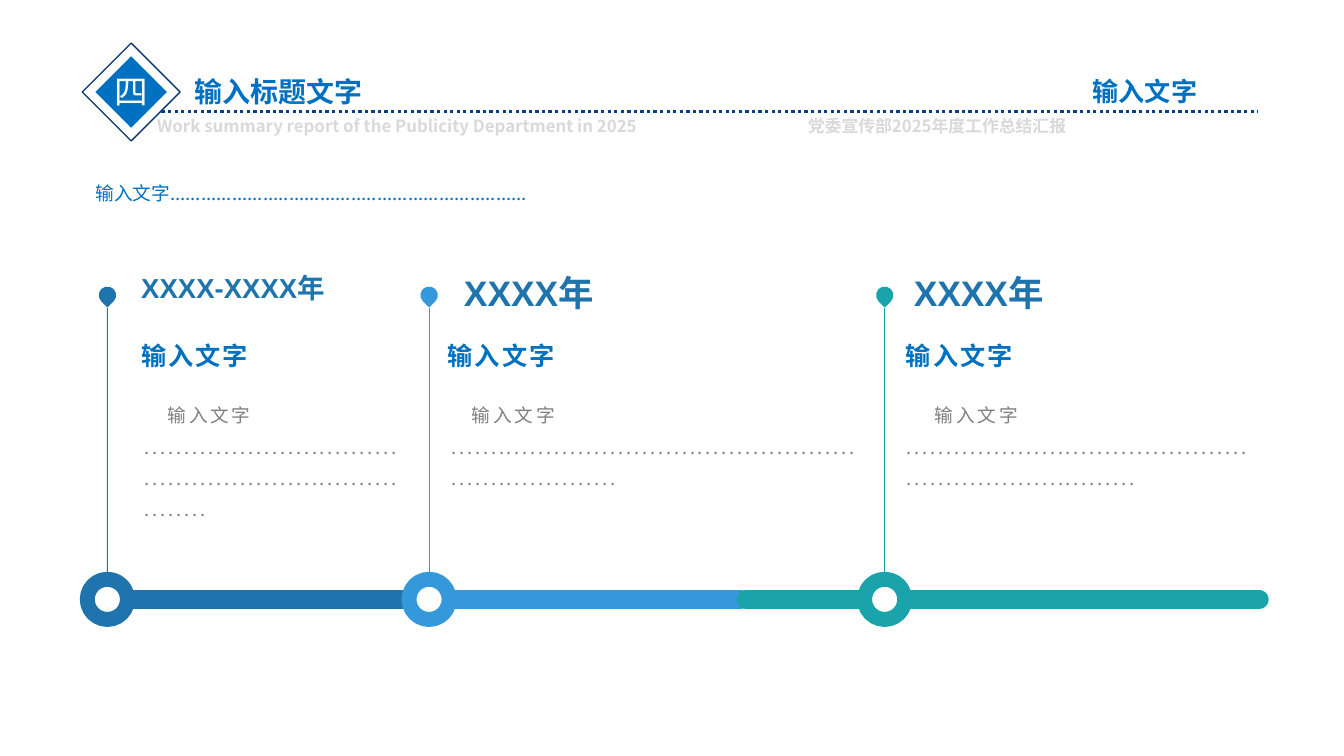
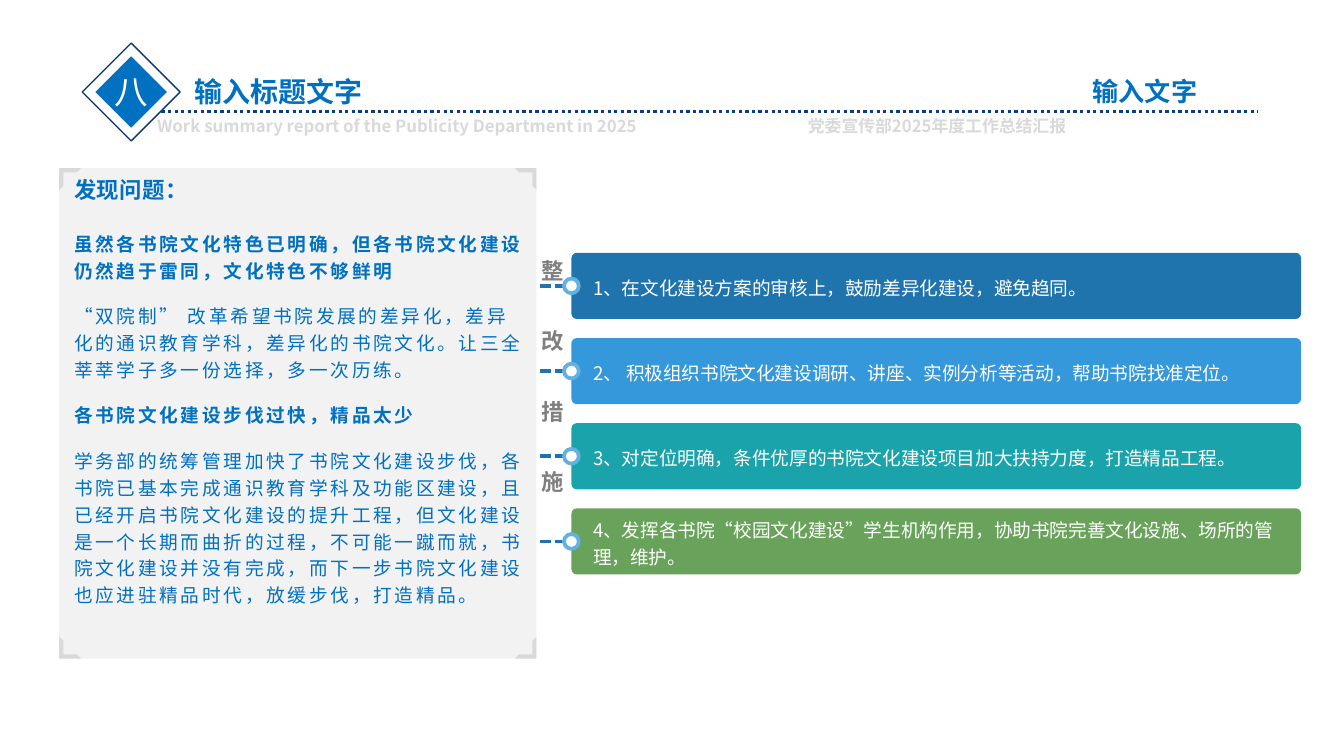
from dataclasses import dataclass

import pptx
import pptx.dml.color
import pptx.enum.dml
import pptx.enum.shapes
import pptx.enum.text
import pptx.oxml
import pptx.oxml.ns
import pptx.shapes.autoshape
import pptx.shapes.connector
import pptx.shapes.shapetree
import pptx.slide
import pptx.text.text
import pptx.util

Cm = pptx.util.Cm
Pt = pptx.util.Pt
SHAPE = pptx.enum.shapes.MSO_SHAPE
ANCHOR = pptx.enum.text.MSO_ANCHOR
ALIGN = pptx.enum.text.PP_ALIGN
DASH = pptx.enum.dml.MSO_LINE
Shapes = pptx.shapes.shapetree._BaseGroupShapes
Frame = pptx.text.text.TextFrame
Box = tuple[float, float, float, float]  # left, top, width, height in cm

# Shared look
CJK = "Noto Sans CJK SC"
BLUE, NAVY, SKY, TEAL, GREEN = "0070C0", "1F74AD", "3498DB", "1AA3AA", "69A35B"
WHITE, GREY, SILVER, PALE = "FFFFFF", "808080", "D9D9D9", "F2F2F2"
INSETS = (0.25, 0.13, 0.25, 0.13)
TIGHT = (0.18, 0.1, 0.18, 0.1)


@dataclass
class Milestone:
    color: str
    x: float
    bar: tuple[float, float]
    year: str
    year_size: float
    year_at: tuple[float, float]     # left, width
    heading_at: tuple[float, float]
    body_at: tuple[float, float]
    body_height: float
    indent: float


MILESTONES = [
    Milestone(NAVY, 2.03, (1.91, 7.9), "XXXX-XXXX年", 14.7,
              (2.49, 4.24), (2.49, 4.83), (2.49, 5.33), 3.23, 0.43),
    Milestone(SKY, 8.11, (8.0, 14.0), "XXXX年", 19,
              (8.59, 3.71), (8.28, 5.87), (8.28, 8.28), 2.64, 0.39),
    Milestone(TEAL, 16.72, (14.1, 23.8), "XXXX年", 19,
              (17.09, 3.71), (16.94, 6.81), (16.89, 7.01), 2.64, 0.53),
]

MEASURES = [
    (NAVY, "1、在文化建设方案的审核上，鼓励差异化建设，避免趋同。"),
    (SKY, "2、 积极组织书院文化建设调研、讲座、实例分析等活动，帮助书院找准定位。"),
    (TEAL, "3、对定位明确，条件优厚的书院文化建设项目加大扶持力度，打造精品工程。"),
    (GREEN, "4、发挥各书院“校园文化建设”学生机构作用，协助书院完善文化设施、"
            "场所的管理，维护。"),
]

# Each problem: bold statement, then its explanation
PROBLEMS = [
    ("虽然各书院文化特色已明确，但各书院文化建设仍然趋于雷同，文化特色不够鲜明",
     "“双院制” 改革希望书院发展的差异化，差异化的通识教育学科，差异化的书院文化。"
     "让三全莘莘学子多一份选择，多一次历练。"),
    ("各书院文化建设步伐过快，精品太少",
     "学务部的统筹管理加快了书院文化建设步伐，各书院已基本完成通识教育学科及功能区建设，"
     "且已经开启书院文化建设的提升工程，但文化建设是一个长期而曲折的过程，不可能一蹴而就，"
     "书院文化建设并没有完成，而下一步书院文化建设也应进驻精品时代，放缓步伐，打造精品。"),
]


# Helpers
def rgb(value: str) -> pptx.dml.color.RGBColor:
    return pptx.dml.color.RGBColor.from_string(value)


def write(tf: Frame, text: str, *, size: float, color: str, font: str = CJK,
          bold: bool = False, spacing: float = 0, indent: float = 0,
          tab: float = 0, line: float = 1, after: float = 0,
          align: ALIGN = ALIGN.LEFT) -> None:
    """Write one paragraph; the first call fills the empty one."""
    p = tf.add_paragraph() if tf.text else tf.paragraphs[0]
    p_pr = p._p.get_or_add_pPr()
    if indent:
        p_pr.set("indent", str(Cm(indent)))
    if tab:
        tabs = pptx.oxml.parse_xml(
            f'<a:tabLst {pptx.oxml.ns.nsdecls("a")}>'
            f'<a:tab pos="{Cm(tab)}" algn="l"/></a:tabLst>')
        p_pr.append(tabs)
    p.alignment, p.line_spacing = align, line
    p.space_before, p.space_after = Pt(0), Pt(after)
    r = p.add_run()
    r.text = text
    r.font.size, r.font.bold, r.font.name = Pt(size), bold, font
    r.font.color.rgb = rgb(color)
    r_pr = r._r.get_or_add_rPr()
    if spacing:
        r_pr.set("spc", str(round(spacing * 100)))
    r_pr.find(pptx.oxml.ns.qn("a:latin")).addnext(pptx.oxml.parse_xml(
        f'<a:ea {pptx.oxml.ns.nsdecls("a")} typeface="{CJK}"/>'))


def set_frame(tf: Frame, insets: Box = INSETS, anchor: ANCHOR = ANCHOR.TOP,
              wrap: bool = True) -> Frame:
    tf.auto_size = pptx.enum.text.MSO_AUTO_SIZE.NONE
    tf.word_wrap, tf.vertical_anchor = wrap, anchor
    (tf.margin_left, tf.margin_top,
     tf.margin_right, tf.margin_bottom) = map(Cm, insets)
    return tf


def add_text(shapes: Shapes, box: Box, **frame) -> Frame:
    return set_frame(shapes.add_textbox(*map(Cm, box)).text_frame, **frame)


def paint(sp: pptx.shapes.autoshape.Shape, fill: str = "", line: str = "",
          width: float = 0) -> None:
    sp.shadow.inherit = False
    if fill:
        sp.fill.solid()
        sp.fill.fore_color.rgb = rgb(fill)
    else:
        sp.fill.background()
    if line:
        sp.line.color.rgb, sp.line.width = rgb(line), Pt(width)
    else:
        sp.line.fill.background()


def add_shape(shapes: Shapes, kind: SHAPE, box: Box,
              **look) -> pptx.shapes.autoshape.Shape:
    sp = shapes.add_shape(kind, *map(Cm, box))
    paint(sp, **look)
    return sp


def add_centred(shapes: Shapes, kind: SHAPE, x: float, y: float, size: float,
                **look) -> pptx.shapes.autoshape.Shape:
    return add_shape(shapes, kind, (x - size / 2, y - size / 2, size, size), **look)


def add_line(shapes: Shapes, x1: float, y1: float, x2: float, y2: float,
             color: str, width: float, dash: DASH | None = None,
             rounded: bool = False) -> pptx.shapes.connector.Connector:
    c = shapes.add_connector(pptx.enum.shapes.MSO_CONNECTOR.STRAIGHT,
                             Cm(x1), Cm(y1), Cm(x2), Cm(y2))
    c.line.color.rgb, c.line.width = rgb(color), Pt(width)
    if dash is not None:
        c.line.dash_style = dash
    if rounded:
        c.line._get_or_add_ln().set("cap", "rnd")
    c._element.spPr.append(pptx.oxml.parse_xml(
        f'<a:effectLst {pptx.oxml.ns.nsdecls("a")}/>'))
    return c


def add_header(s: pptx.slide.Slide, number: str) -> None:
    # Numbered diamond
    badge = s.shapes.add_group_shape().shapes
    x, y = 2.48, 1.74
    add_centred(badge, SHAPE.DIAMOND, x, y, 1.35, fill=BLUE)
    tf = add_text(badge, (1.91, 1.22, 1.14, 1.02), wrap=False)
    write(tf, number, size=18, color=WHITE, align=ALIGN.CENTER)
    add_centred(badge, SHAPE.DIAMOND, x, y, 1.85, line="063672", width=0.75)

    # Title, rule and captions
    title = s.shapes.title
    title.left, title.top, title.width, title.height = map(
        Cm, (3.43, 1.27, 3.68, 0.89))
    write(set_frame(title.text_frame, wrap=False), "输入标题文字",
          size=15, color=BLUE, bold=True)
    add_line(s.shapes, 3.05, 2.11, 23.77, 2.11, "073E87", 1.75, DASH.ROUND_DOT)
    write(add_text(s.shapes, (20.4, 1.3, 4.5, 0.86)), "输入文字",
          size=14, color=BLUE, bold=True)
    write(add_text(s.shapes, (2.72, 2.06, 21.39, 0.63)),
          "Work summary report of the Publicity Department in 2025"
          "\t党委宣传部2025年度工作总结汇报",
          size=9, color=SILVER, bold=True, tab=12.3)


def add_milestone(shapes: Shapes, m: Milestone) -> None:
    axis_y = 11.33
    add_line(shapes, m.bar[0], axis_y, m.bar[1], axis_y, m.color, 10, rounded=True)
    ring = add_centred(shapes, SHAPE.OVAL, m.x, axis_y, 0.76,
                       fill=WHITE, line=m.color, width=8)
    stem = add_line(shapes, m.x, 5.82, m.x, 10.95, m.color, 0.5)
    stem.end_connect(ring, 0)
    pin = add_centred(shapes, SHAPE.TEAR, m.x, 5.58, 0.33, fill=m.color)
    pin.rotation = 135

    left, width = m.year_at
    write(add_text(shapes, (left, 5.03, width, 1.09), insets=TIGHT), m.year,
          size=m.year_size, color=NAVY, font="Arial", bold=True)
    left, width = m.heading_at
    write(add_text(shapes, (left, 6.3, width, 0.81), insets=TIGHT,
                   anchor=ANCHOR.BOTTOM),
          "输入文字", size=13.5, color=BLUE, bold=True, spacing=1.2)
    left, width = m.body_at
    tf = add_text(shapes, (left, 7.34, width, m.body_height))
    body = dict(size=10, color=GREY, spacing=1.5, line=1.4)
    write(tf, "输入文字", indent=m.indent, **body)
    write(tf, "." * 72, **body)


def add_corner(shapes: Shapes, x: float, y: float, dx: int, dy: int) -> None:
    """Bracket at (x, y) whose arms run in directions dx and dy."""
    outline = [(0, 0), (0.41, 0), (0.33, 0.08), (0.08, 0.08), (0.08, 0.33), (0, 0.41)]
    points = [(Cm(x + dx * a), Cm(y + dy * b)) for a, b in outline]
    builder = shapes.build_freeform(*points[0])
    builder.add_line_segments(points[1:])
    paint(builder.convert_to_shape(), fill=SILVER)


def build_timeline(s: pptx.slide.Slide) -> None:
    for m in MILESTONES:
        add_milestone(s.shapes, m)
    add_header(s, "四")
    write(add_text(s.shapes, (1.27, 3.1, 23.04, 0.9)), "输入文字" + "." * 69,
          size=10, color=BLUE, indent=0.29, line=1.5)


def build_problems(s: pptx.slide.Slide) -> None:
    add_header(s, "八")

    # Measures with dashed leads, which run under the panel
    bar_x, bar_y, bar_h, pitch = 10.8, 4.78, 1.25, 1.61
    middles = [bar_y + bar_h / 2 + i * pitch for i in range(len(MEASURES))]
    for y, (color, text) in zip(middles, MEASURES):
        bar = add_shape(s.shapes, SHAPE.ROUNDED_RECTANGLE,
                        (bar_x, y - bar_h / 2, 13.79, bar_h), fill=color)
        bar.adjustments[0] = 0.08
        tf = set_frame(bar.text_frame, insets=(0.38, 0, 0.18, 0),
                       anchor=ANCHOR.MIDDLE)
        write(tf, text, size=10, color=WHITE, line=1.2)
        lead = add_line(s.shapes, 9.63, y, bar_x, y, NAVY, 2, DASH.SQUARE_DOT)
        lead.end_connect(bar, 1)

    # Panel with corner brackets
    left, top, width, height = 1.12, 3.18, 9.02, 9.27
    add_shape(s.shapes, SHAPE.RECTANGLE, (left, top, width, height), fill=PALE)
    for x, dx in ((left, 1), (left + width, -1)):
        for y, dy in ((top, 1), (top + height, -1)):
            add_corner(s.shapes, x, y, dx, dy)

    for y in middles:
        add_centred(s.shapes, SHAPE.OVAL, bar_x, y, 0.28,
                    fill=WHITE, line="63B0E3", width=2)

    # Problems
    tf = add_text(s.shapes, (left, 3.43, width, 8.61), insets=(0.28, 0, 0.23, 0))
    write(tf, "发现问题：", size=12, color=BLUE, bold=True, spacing=0.3,
          line=0.8, after=13.5)
    for statement, detail in PROBLEMS:
        for text, bold in ((statement, True), (detail, False)):
            write(tf, text, size=10, color=BLUE, bold=bold, spacing=1.5,
                  line=1.2, after=10)

    # Vertical label
    tf = add_text(s.shapes, (9.91, 4.78, 1.02, 6.15))
    tf._txBody.bodyPr.set("vert", "eaVert")
    write(tf, "整改措施", size=12, color=GREY, bold=True, spacing=25.7)


def main() -> None:
    prs = pptx.Presentation()
    prs.slide_width, prs.slide_height = Cm(25.4), Cm(14.29)
    title_only = prs.slide_layouts[5]
    for build in (build_timeline, build_problems):
        build(prs.slides.add_slide(title_only))
    prs.save("out.pptx")


if __name__ == "__main__":
    main()
